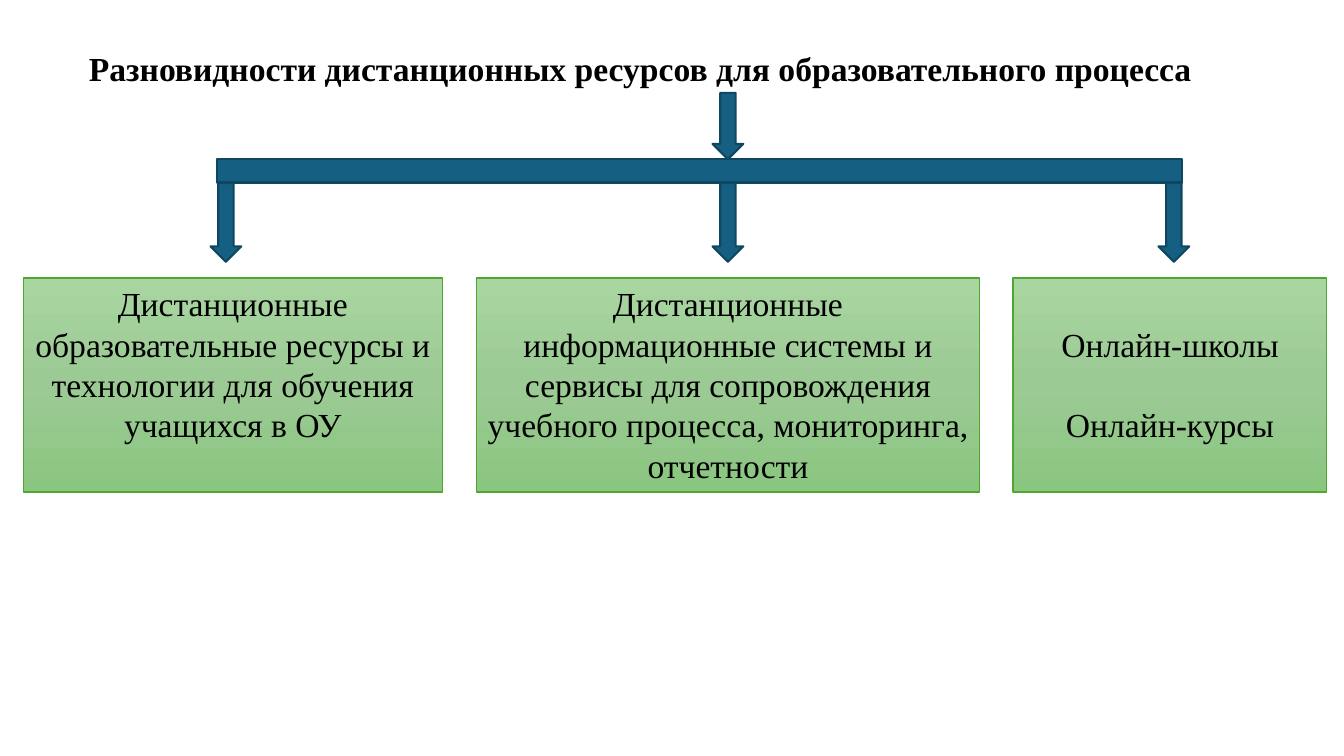
from copy import deepcopy

from pptx import Presentation
from pptx.dml.color import RGBColor
from pptx.enum import shapes, text
from pptx.oxml.ns import qn
from pptx.util import Pt

COLORS = {
    "ink": "000000",
    "teal": "156082",
    "teal_edge": "104760",
    "green_edge": "4EA72E",
    "green_top": "A8D5A0",
    "green_middle": "9CCA94",
    "green_bottom": "8AC680",
}
FONT = "Times New Roman"
LINE_HEIGHT = 28.8
ARROW_WIDTH = 22
BRANCH_TOP, BRANCH_HEIGHT = 130.8, 56.2
BOX_TOP, BOX_HEIGHT = 198.7, 152.7


def rgb(name):
    """Return the named colour."""
    return RGBColor.from_string(COLORS[name])


def write(frame, paragraphs, size=24, bold=False, align=text.PP_ALIGN.CENTER,
          color="ink", gap=0, top_inset=3.6):
    """Fill a text frame with formatted paragraphs, gap points apart."""
    frame.word_wrap = True
    frame.vertical_anchor = text.MSO_ANCHOR.TOP
    frame.margin_top = Pt(top_inset)
    for index, content in enumerate(paragraphs):
        paragraph = frame.paragraphs[0] if index == 0 else frame.add_paragraph()
        paragraph.alignment = align
        paragraph.space_before = Pt(gap if index else 0)
        run = paragraph.add_run()
        run.text = content
        run.font.name = FONT
        run.font.size = Pt(size)
        run.font.bold = bold
        run.font.color.rgb = rgb(color)


def add_outlined(slide, kind, left, top, width, height, edge, weight):
    """Add a preset shape with an outline and no shadow."""
    outlined = slide.shapes.add_shape(kind, Pt(left), Pt(top), Pt(width), Pt(height))
    outlined.shadow.inherit = False
    outlined.line.color.rgb = rgb(edge)
    outlined.line.width = Pt(weight)
    return outlined


def add_teal(slide, kind, left, top, width, height):
    """Add a solid teal part of the branching scheme."""
    part = add_outlined(slide, kind, left, top, width, height, "teal_edge", 1.5)
    part.fill.solid()
    part.fill.fore_color.rgb = rgb("teal")


def add_arrow(slide, center, top, height):
    """Add a down arrow centred on a horizontal position."""
    add_teal(slide, shapes.MSO_SHAPE.DOWN_ARROW, center - ARROW_WIDTH / 2, top,
             ARROW_WIDTH, height)


def add_category(slide, left, width, paragraphs, **text_format):
    """Add a green gradient box with its category text."""
    category = add_outlined(slide, shapes.MSO_SHAPE.RECTANGLE, left, BOX_TOP, width,
                            BOX_HEIGHT, "green_edge", 1)
    category.fill.gradient()
    category.fill.gradient_angle = 270
    first_stop = category._element.spPr.find(".//" + qn("a:gs"))
    first_stop.addnext(deepcopy(first_stop))
    tones = ("green_top", "green_middle", "green_bottom")
    for index, (stop, tone) in enumerate(zip(category.fill.gradient_stops, tones)):
        stop.position = index / 2
        stop.color.rgb = rgb(tone)
    write(category.text_frame, paragraphs, **text_format)


def main():
    """Build the slide and save it."""
    deck = Presentation()
    deck.slide_width, deck.slide_height = Pt(960), Pt(540)
    slide = deck.slides.add_slide(deck.slide_layouts[6])

    heading = slide.shapes.add_textbox(Pt(56.4), Pt(30.4), Pt(842), Pt(36))
    write(heading.text_frame,
          ["Разновидности дистанционных ресурсов для образовательного процесса"],
          bold=True, align=text.PP_ALIGN.LEFT)

    add_arrow(slide, 520, 66.4, 47.4)
    add_teal(slide, shapes.MSO_SHAPE.RECTANGLE, 155.2, 113.8, 689, 16.6)
    for center in (161.4, 520, 838.5):
        add_arrow(slide, center, BRANCH_TOP, BRANCH_HEIGHT)

    add_category(slide, 16.6, 299.4,
                 ["Дистанционные образовательные ресурсы и технологии "
                  "для обучения учащихся в ОУ"])
    add_category(slide, 340.4, 359.2,
                 ["Дистанционные информационные системы и сервисы для "
                  "сопровождения учебного процесса, мониторинга, отчетности"])
    add_category(slide, 723.7, 224, ["Онлайн-школы", "Онлайн-курсы"],
                 gap=LINE_HEIGHT, top_inset=3.6 + LINE_HEIGHT)

    deck.save("out.pptx")


if __name__ == "__main__":
    main()
